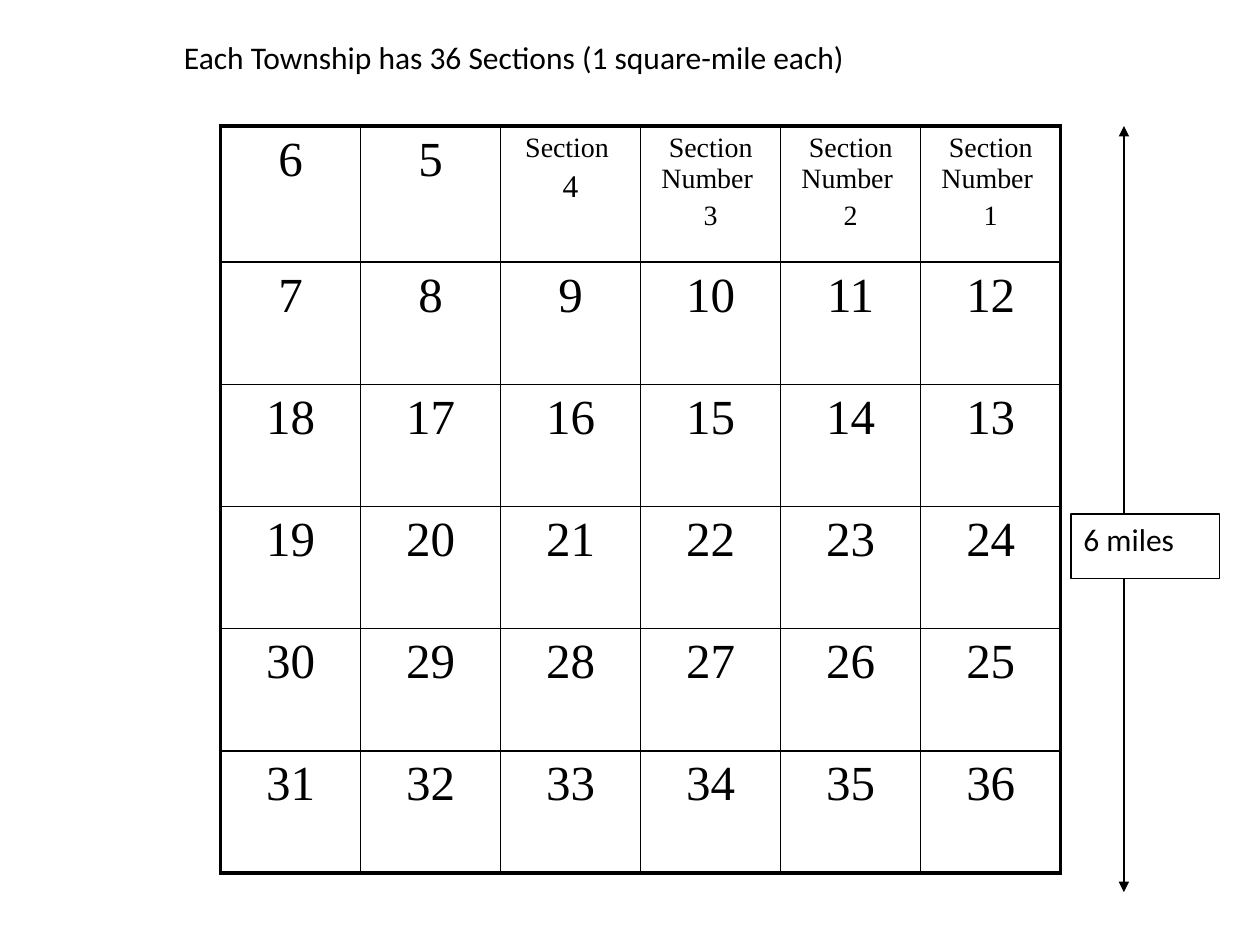
from lxml import etree
from pptx import Presentation
from pptx.dml.color import RGBColor as RGB
from pptx.enum.shapes import MSO_CONNECTOR as CONN, MSO_SHAPE as SHAPE
from pptx.enum.text import MSO_ANCHOR as ANCHOR, PP_ALIGN as ALIGN
from pptx.oxml import parse_xml
from pptx.oxml.ns import nsdecls, qn
from pptx.util import Inches, Pt

COLORS = {"ink": "000000", "paper": "FFFFFF"}
INK = RGB.from_string(COLORS["ink"])
N = 6                                   # sections along each side
COL, FIRST_ROW, ROW = 6.67 / N, 1.08, 0.97
LEFT, TOP = 1.75, 1.0
THIN, THICK = 1, 2.25                   # grid and outer border, points


def write(tf, text, size=18, font="Calibri", align=ALIGN.LEFT,
          before=0, first=True):
    """Write one paragraph into a text frame, before as percent of a line."""
    p = tf.paragraphs[0] if first else tf.add_paragraph()
    p.alignment = align
    if before:
        p._p.get_or_add_pPr().append(parse_xml(
            f'<a:spcBef {nsdecls("a")}><a:spcPct val="{before * 1000}"/></a:spcBef>'))
    r = p.add_run()
    r.text = text
    r.font.size, r.font.name, r.font.bold = Pt(size), font, False
    r.font.color.rgb = INK


def border(cell, side, width):
    cell._tc.get_or_add_tcPr().append(parse_xml(
        f'<a:ln{side} {nsdecls("a")} w="{Pt(width)}"><a:solidFill>'
        f'<a:srgbClr val="{COLORS["ink"]}"/></a:solidFill></a:ln{side}>'))


prs = Presentation()
prs.slide_width, prs.slide_height = Inches(10), Inches(7.5)
s = prs.slides.add_slide(prs.slide_layouts[5])
s.background.fill.solid()
s.background.fill.fore_color.rgb = RGB.from_string(COLORS["paper"])

# Title
title = s.shapes.title
title.left, title.top = Inches(1.36), Inches(0.25)
title.width, title.height = Inches(7.26), Inches(0.5)
title.text_frame.word_wrap = True
title.text_frame.vertical_anchor = ANCHOR.TOP
write(title.text_frame, "Each Township has 36 Sections (1 square-mile each)")

# Township grid, numbered back and forth from the top right corner
frame = s.shapes.add_table(N, N, Inches(LEFT), Inches(TOP), Inches(COL * N),
                           Inches(FIRST_ROW + ROW * (N - 1)))
table = frame.table
table.first_row = table.horz_banding = False
captions = {1: "Section Number ", 2: "Section Number ",
            3: "Section Number ", 4: "Section "}
for row in range(N):
    table.rows[row].height = Inches(ROW if row else FIRST_ROW)
    for col in range(N):
        step = col if row % 2 else N - 1 - col
        number = row * N + step + 1
        cell = table.cell(row, col)
        style = dict(font="Times New Roman", align=ALIGN.CENTER, before=20)
        if number in captions:
            write(cell.text_frame, captions[number], size=16, **style)
            write(cell.text_frame, str(number), size=18 if number == 4 else 16,
                  first=False, **style)
        else:
            write(cell.text_frame, str(number), size=28, **style)
        outer = {"L": col == 0, "R": col == N - 1,
                 "T": row == 0, "B": row == N - 1}
        for side, is_outer in outer.items():
            border(cell, side, THICK if is_outer else THIN)
        cell.fill.background()
for column in table.columns:
    column.width = Inches(COL)

# Side length label
box_top, box_height = 4.08, 0.51
sp = s.shapes.add_shape(SHAPE.RECTANGLE, Inches(8.5), Inches(box_top),
                        Inches(1.18), Inches(box_height))
sp.shadow.inherit = False
sp.fill.background()
sp.line.color.rgb, sp.line.width = INK, Pt(0.75)
sp.text_frame.word_wrap = True
sp.text_frame.vertical_anchor = ANCHOR.TOP
write(sp.text_frame, "6 miles")

# Arrows from the label to the bottom and top of the grid
arrow_x = Inches(8.92)
for start, end in ((box_top + box_height, 7.08), (box_top, TOP)):
    arrow = s.shapes.add_connector(CONN.STRAIGHT, arrow_x, Inches(start),
                                   arrow_x, Inches(end))
    arrow.line.color.rgb, arrow.line.width = INK, Pt(0.75)
    etree.SubElement(arrow.line._get_or_add_ln(), qn("a:tailEnd"), type="triangle")
    etree.SubElement(arrow._element.spPr, qn("a:effectLst"))

prs.save("out.pptx")
